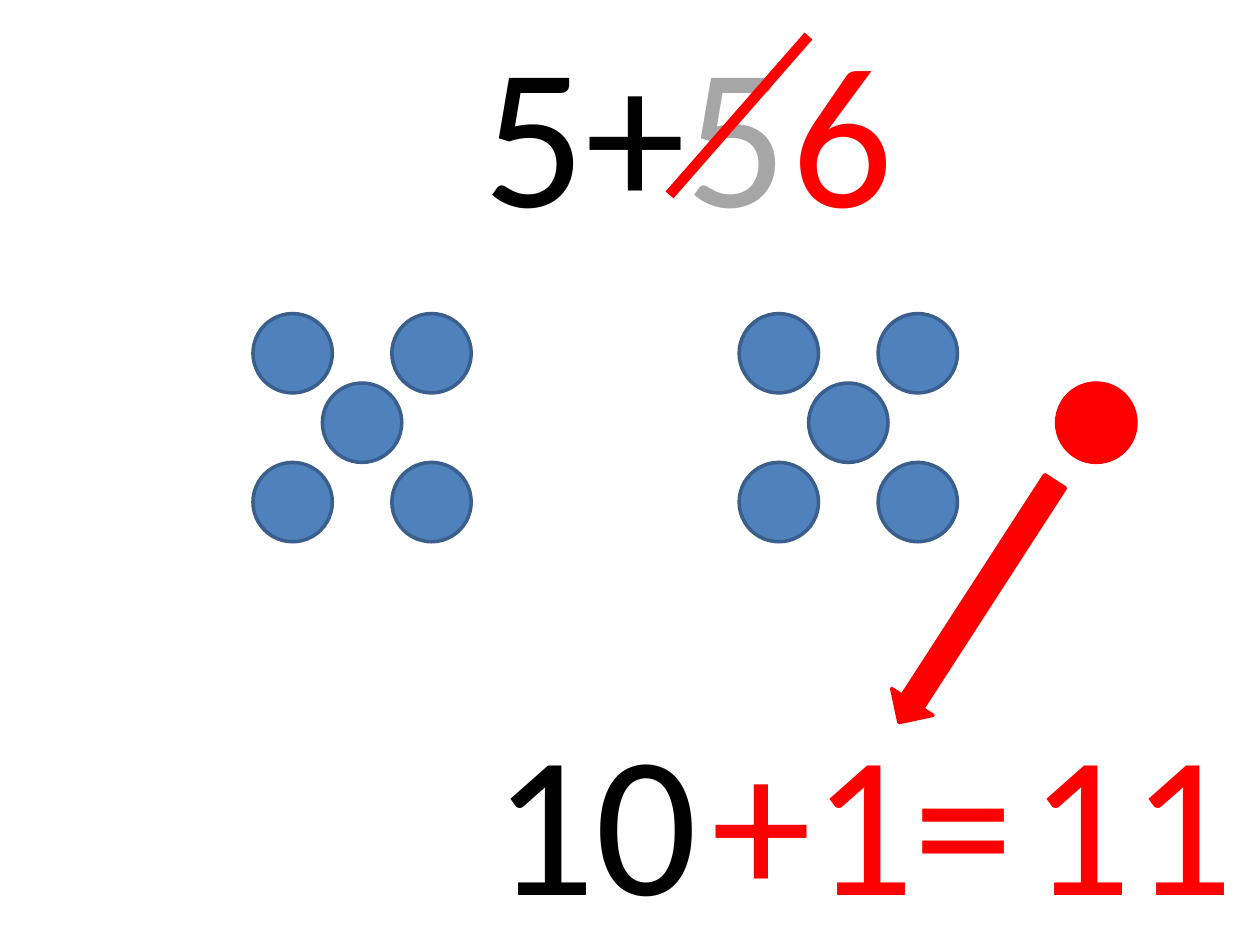
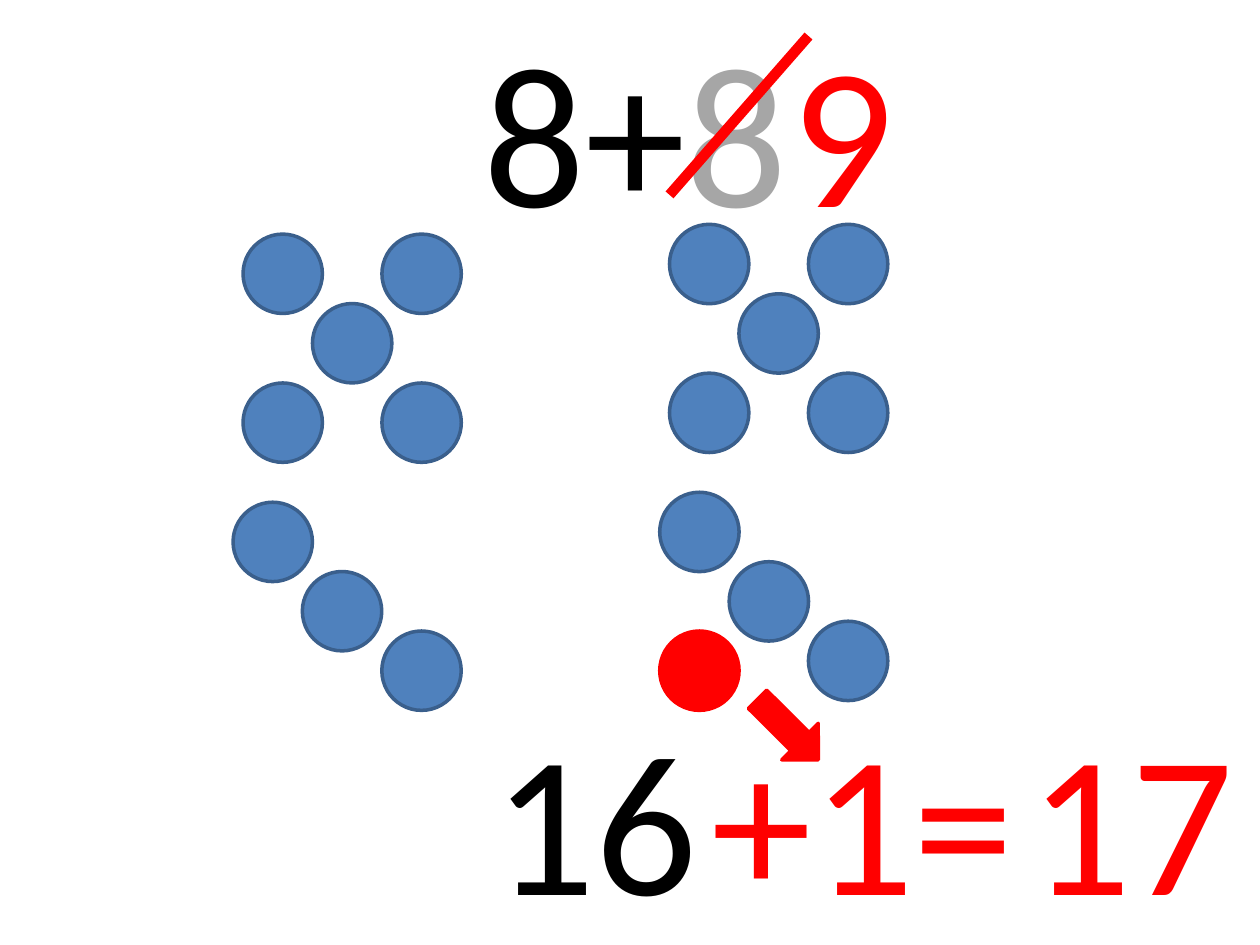
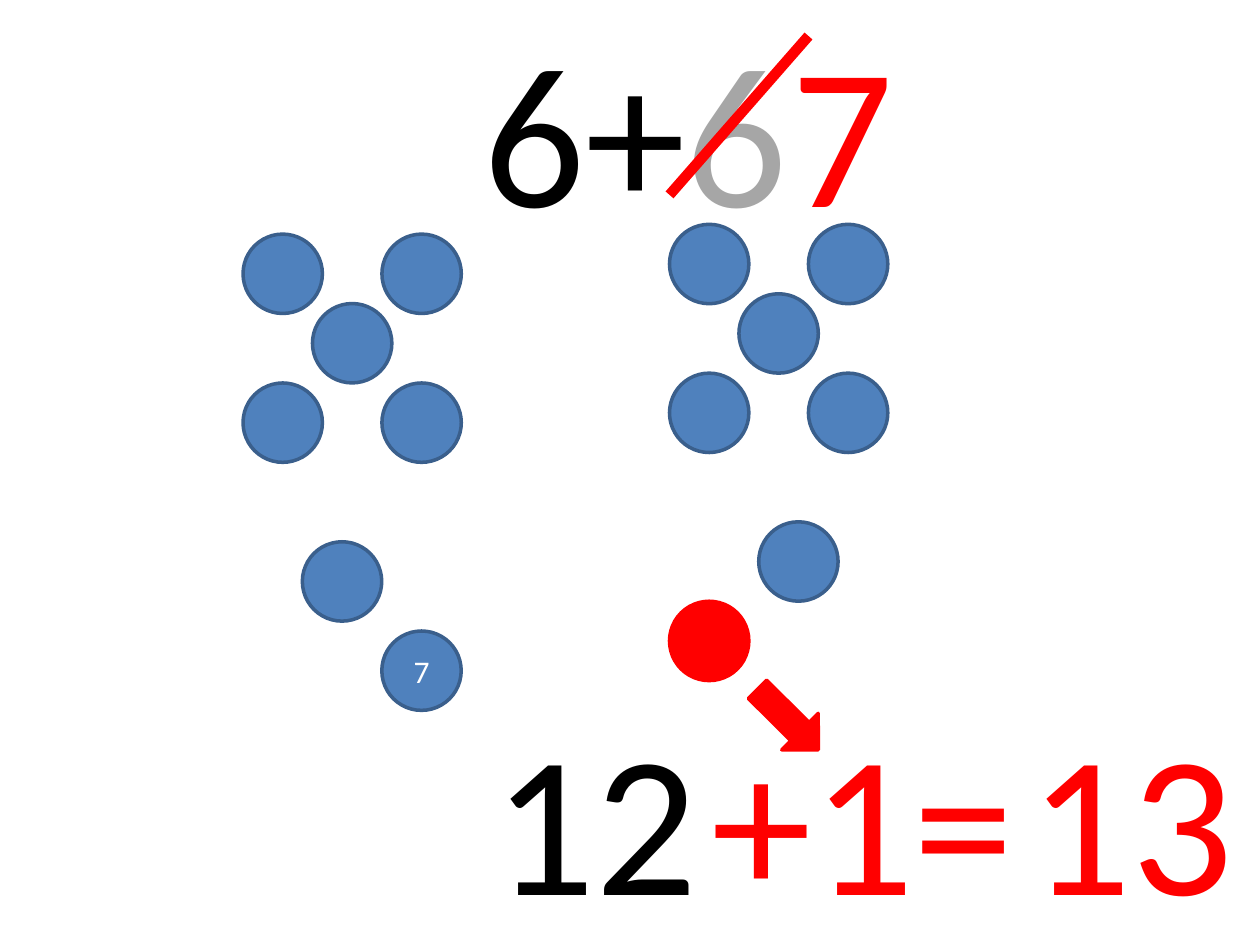
import pptx
import pptx.util
import pptx.dml.color
import pptx.enum.shapes
import pptx.enum.text
import pptx.oxml.ns
import lxml.etree

Pt = pptx.util.Pt
SHAPES = pptx.enum.shapes.MSO_SHAPE
BLACK = pptx.dml.color.RGBColor(0x00, 0x00, 0x00)
WHITE = pptx.dml.color.RGBColor(0xFF, 0xFF, 0xFF)
GREY = pptx.dml.color.RGBColor(0xA6, 0xA6, 0xA6)
RED = pptx.dml.color.RGBColor(0xFF, 0x00, 0x00)
BLUE = pptx.dml.color.RGBColor(0x4F, 0x81, 0xBD)
DARK_BLUE = pptx.dml.color.RGBColor(0x3A, 0x5F, 0x8C)

FONT = "Calibri"
DOT = 45.36
FIVE = [(0, 0), (79.38, 0), (0, 85.05), (79.38, 85.05), (39.69, 39.69)]
TEXT_HEIGHT = 147
ANSWER_TOP = 393
FRAME_FORMAT = {
    "word_wrap": True,
    "auto_size": pptx.enum.text.MSO_AUTO_SIZE.SHAPE_TO_FIT_TEXT,
    "vertical_anchor": pptx.enum.text.MSO_ANCHOR.TOP,
}

problems = [
    {
        "number": 5,
        "fives": [(144.57, 179.2), (422.4, 179.2)],
        "red_dot": (603.8, 218.9),
        "arrow": (544.3, 261.9, 28.1, 164.2, 32.9),
        "extras": [],
    },
    {
        "number": 8,
        "fives": [(138.9, 133.8), (382.6, 128.2)],
        "red_dot": (377, 360.6),
        "arrow": (435.5, 392.4, 29.5, 49, 314.9),
        "extras": [(218.2, 360.6, ""), (172.8, 326.6, ""), (133.2, 287, ""),
                   (462, 355, ""), (416.7, 321, ""), (377, 281.3, "")],
    },
    {
        "number": 6,
        "fives": [(138.9, 133.8), (382.6, 128.2)],
        "red_dot": (382.6, 343.6),
        "arrow": (435.5, 386.7, 29.5, 49, 314.9),
        "extras": [(218.2, 360.6, "7"), (172.8, 309.6, ""), (433.6, 298.2, "")],
    },
]


def add_figure(page, kind, bounds, fill, line, label=""):
    figure = page.shapes.add_shape(kind, *[Pt(length) for length in bounds])
    figure.shadow.inherit = False
    figure.fill.solid()
    figure.fill.fore_color.rgb = fill
    figure.line.color.rgb = line
    figure.line.width = Pt(2)
    if label:
        para = figure.text_frame.paragraphs[0]
        para.alignment = pptx.enum.text.PP_ALIGN.CENTER
        span = para.add_run()
        span.text = label
        for name, value in {"name": FONT, "size": Pt(18)}.items():
            setattr(span.font, name, value)
        span.font.color.rgb = WHITE
    return figure


def add_sum(page, left, top, width, spans, box=None):
    bounds = {"left": Pt(left), "top": Pt(top), "width": Pt(width), "height": Pt(TEXT_HEIGHT)}
    box = box or page.shapes.add_textbox(**bounds)
    for name, value in bounds.items():
        setattr(box, name, value)
    for name, value in FRAME_FORMAT.items():
        setattr(box.text_frame, name, value)
    para = box.text_frame.paragraphs[0]
    para.alignment = pptx.enum.text.PP_ALIGN.LEFT
    for text, color in spans:
        span = para.add_run()
        span.text = text
        for name, value in {"name": FONT, "size": Pt(115)}.items():
            setattr(span.font, name, value)
        span.font.color.rgb = color


deck = pptx.Presentation()
deck.slide_width = Pt(720)
deck.slide_height = Pt(540)

for problem in problems:
    page = deck.slides.add_slide(deck.slide_layouts[5])
    number = problem["number"]
    double = 2 * number

    add_sum(page, 269.2, 0, 209.5, [(f"{number}+", BLACK), (str(number), GREY)], page.shapes.title)

    for left, top in problem["fives"]:
        for across, down in FIVE:
            add_figure(page, SHAPES.OVAL, (left + across, top + down, DOT, DOT), BLUE, DARK_BLUE)

    add_sum(page, 275, ANSWER_TOP, 164.2, [(str(double), BLACK)])

    strike = page.shapes.add_connector(
        pptx.enum.shapes.MSO_CONNECTOR.STRAIGHT, Pt(382.6), Pt(111.4), Pt(462), Pt(20.6))
    strike.line.color.rgb = RED
    strike.line.width = Pt(6)
    lxml.etree.SubElement(strike.element.spPr, pptx.oxml.ns.qn("a:effectLst"))

    add_sum(page, 445, 0, 102.2, [(str(number + 1), RED)])
    add_figure(page, SHAPES.OVAL, (*problem["red_dot"], DOT, DOT), RED, RED)
    add_sum(page, 581.2, ANSWER_TOP, 164.2, [(str(double + 1), RED)])
    add_sum(page, 399.7, ANSWER_TOP, 198.7, [("+1=", RED)])

    *bounds, angle = problem["arrow"]
    arrow = add_figure(page, SHAPES.DOWN_ARROW, bounds, RED, RED)
    arrow.rotation = angle

    for left, top, label in problem["extras"]:
        add_figure(page, SHAPES.OVAL, (left, top, DOT, DOT), BLUE, DARK_BLUE, label)

deck.save("out.pptx")
